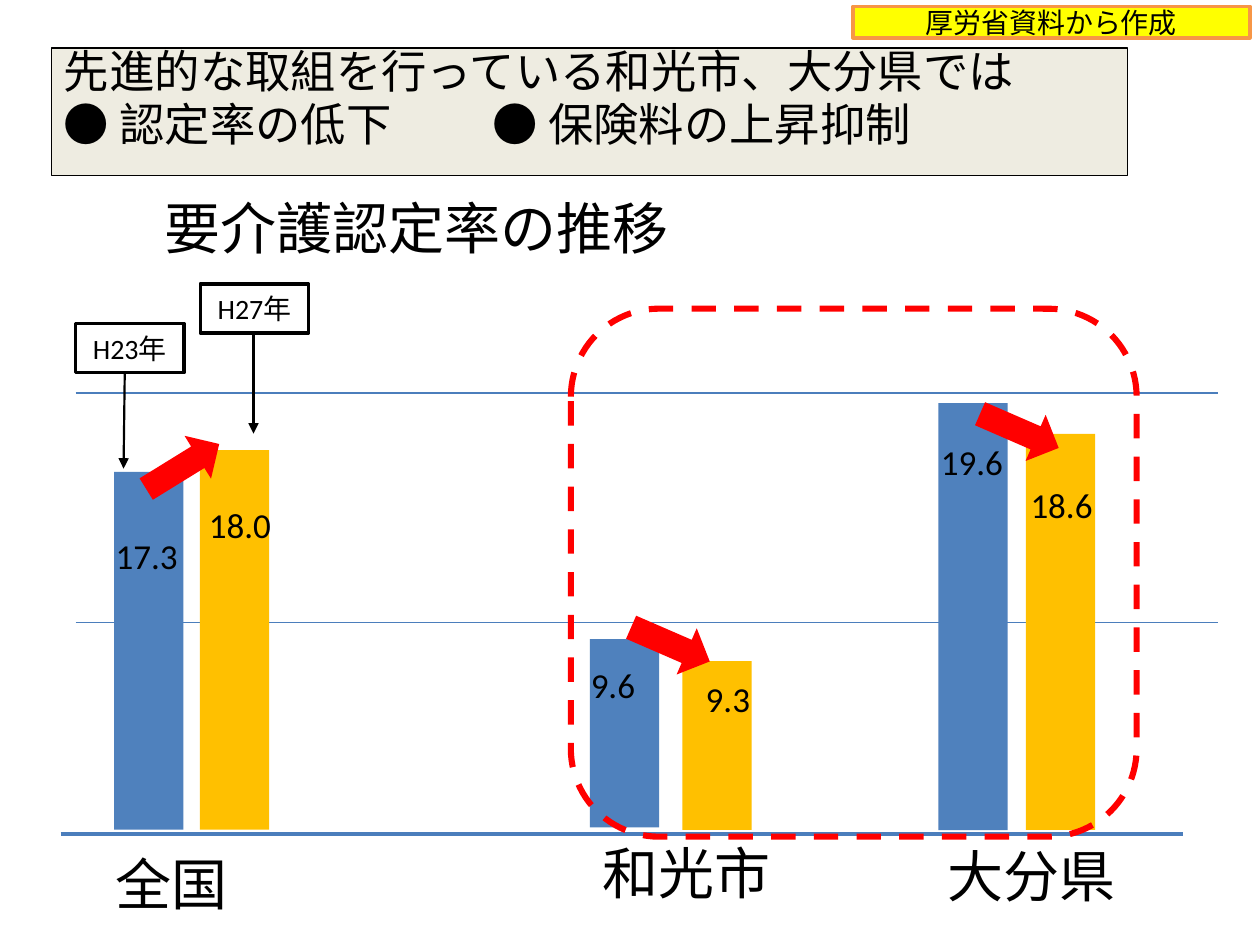
from lxml.etree import SubElement as Sub
from pptx import Presentation
from pptx.dml.color import RGBColor as RGB
from pptx.enum.dml import MSO_LINE as Dash
from pptx.enum.shapes import MSO_CONNECTOR as Conn, MSO_SHAPE as Kind
from pptx.enum.text import MSO_ANCHOR as Anchor, PP_ALIGN as Align
from pptx.oxml.ns import qn
from pptx.util import Pt

BLACK = RGB(0, 0, 0)
WHITE = RGB(255, 255, 255)
CREAM = RGB(0xEE, 0xEC, 0xE1)
BLUE = RGB(0x4F, 0x81, 0xBD)
RULE = RGB(0x4B, 0x7E, 0xBC)
GOLD = RGB(0xFF, 0xC0, 0)
RED = RGB(255, 0, 0)
YELLOW = RGB(255, 255, 0)
ORANGE = RGB(0xF7, 0x96, 0x46)

deck = Presentation()
deck.slide_width, deck.slide_height = Pt(720), Pt(540)
slide = deck.slides.add_slide(deck.slide_layouts[6])
shapes = slide.shapes


def block(kind, area, fill=None, edge=None, width=0, text="", size=16):
    """Add a flat shape; area is left, top, width and height."""
    shape = shapes.add_shape(kind, *map(Pt, area))
    shape.shadow.inherit = False
    if fill is None:
        shape.fill.background()
    else:
        shape.fill.solid()
        shape.fill.fore_color.rgb = fill
    if edge is None:
        shape.line.fill.background()
    else:
        shape.line.color.rgb = edge
        shape.line.width = Pt(width)
    if text:
        frame = shape.text_frame
        frame.text = text
        frame.word_wrap = True
        frame.vertical_anchor = Anchor.MIDDLE
        for para in frame.paragraphs:
            para.alignment = Align.CENTER
            para.font.name, para.font.size = "Calibri", Pt(size)
            para.font.color.rgb = BLACK
    return shape


def rule(ends, color, width):
    line = shapes.add_connector(Conn.STRAIGHT, *map(Pt, ends))
    line.line.color.rgb = color
    line.line.width = Pt(width)
    Sub(line._element.spPr, qn("a:effectLst"))
    return line


# Headline box
head = block(Kind.RECTANGLE, (29.5, 27.4, 614.9, 72.7), CREAM, BLACK, 0.75,
             "先進的な取組を行っている和光市、大分県では\n"
             "● 認定率の低下\t● 保険料の上昇抑制", 25.9)
head.text_frame.vertical_anchor = Anchor.TOP
for para in head.text_frame.paragraphs:
    para.alignment = Align.LEFT
    para.line_spacing = 0.8
    para.space_before = Pt(5.2)
tabs = Sub(para._p.get_or_add_pPr(), qn("a:tabLst"))
Sub(tabs, qn("a:tab"), pos=str(Pt(245)), algn="l")

# Axis and grid
rule((34.6, 476.6, 676.1, 476.6), RULE, 2.25)
for y in (224.6, 355.7):
    rule((43.2, y, 696.2, y), RULE, 0.75)

# Bars: left, top, height
bars = {
    BLUE: [(65.2, 269.6, 204.5), (337, 365.3, 107.6), (536.2, 230.4, 244)],
    GOLD: [(114.2, 257.2, 216.9), (390, 377.8, 96.4), (586.2, 248, 226.2)],
}
for color, group in bars.items():
    for x, y, high in group:
        block(Kind.RECTANGLE, (x, y, 39.6, high), color)

# Year tags, each with a pointer to its bar
tags = [
    ("H23年", 43.2, 184.9, (71.3, 212.6, 70.6, 267.8)),
    ("H27年", 114.5, 162.2, (144.9, 190.1, 144.9, 247.8)),
]
for text, x, y, ends in tags:
    block(Kind.RECTANGLE, (x, y, 61.9, 28.1), WHITE, BLACK, 2, text)
    line = rule(ends, BLACK, 1.25)
    Sub(line.line._get_or_add_ln(), qn("a:tailEnd"), type="triangle")

# Trend arrows
for x, y, turn in [(79.9, 252.2, 328.3), (358.6, 353.8, 23.5),
                   (558, 231.8, 23.5)]:
    block(Kind.RIGHT_ARROW, (x, y, 49, 28.8), RED).rotation = turn

# Labels: text, left, top, width, size
labels = [
    ("17.3", 59, 301.7, 55.4, 20),
    ("18.0", 112.3, 284.4, 65.5, 20),
    ("9.6", 330.5, 375.8, 65.5, 20),
    ("9.3", 396.2, 383.8, 65.5, 20),
    ("19.6", 530.6, 248.4, 55.4, 20),
    ("18.6", 581.8, 272.9, 55.4, 20),
    ("全国", 59, 481.7, 94.3, 32),
    ("和光市", 337, 475.9, 125.3, 32),
    ("大分県", 534.2, 477.4, 125.3, 32),
    ("要介護認定率の推移", 87.1, 107.3, 393.8, 32),
]
for text, x, y, wide, size in labels:
    high = 31.7 if size == 20 else 46.1
    frame = shapes.add_textbox(Pt(x), Pt(y), Pt(wide), Pt(high)).text_frame
    frame.word_wrap = True
    frame.text = text
    font = frame.paragraphs[0].font
    font.name, font.size = "Calibri", Pt(size)
    font.color.rgb = BLACK

# Frame around the two model areas, and the source tag
ring = block(Kind.ROUNDED_RECTANGLE, (326.2, 176.4, 323.3, 301.7),
             edge=RED, width=3.5)
ring.line.dash_style = Dash.DASH
block(Kind.RECTANGLE, (487.4, 3.6, 226.8, 18), YELLOW, ORANGE, 2,
      "厚労省資料から作成")

deck.save("out.pptx")
